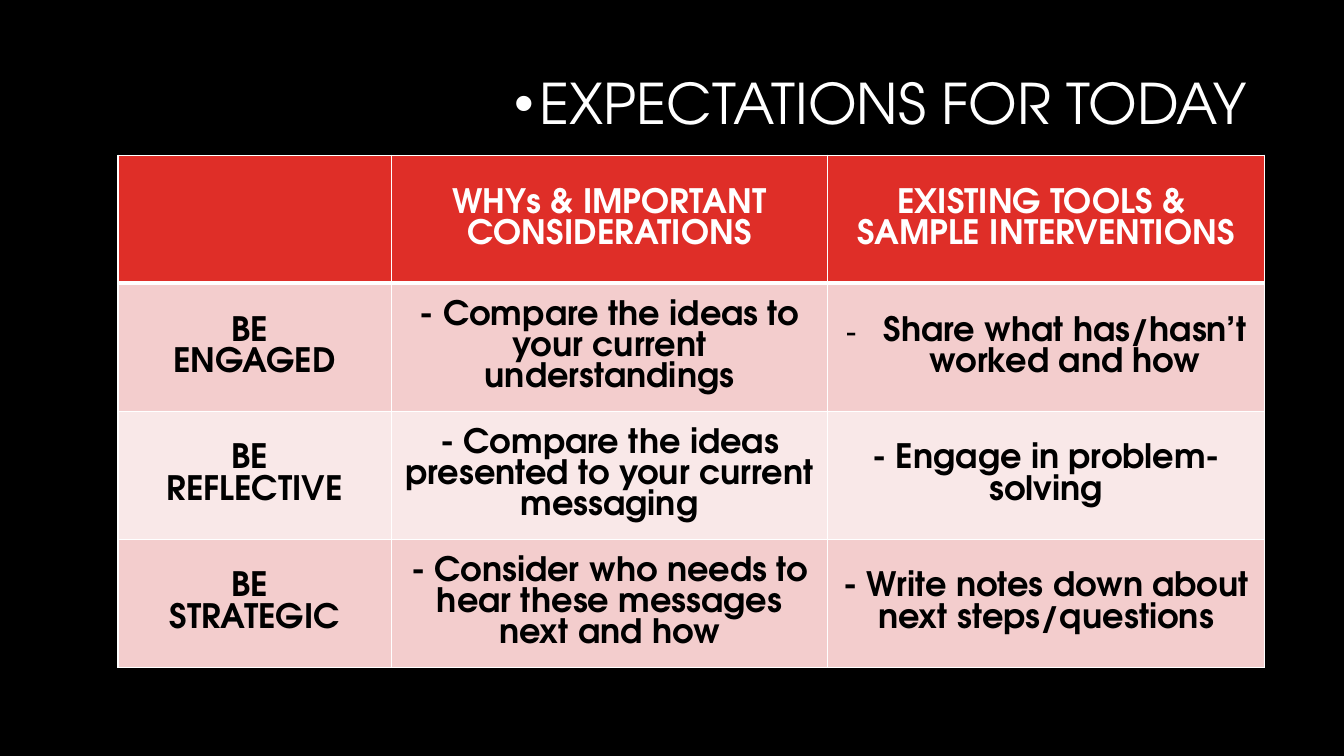
from pptx import Presentation
from pptx.dml.color import RGBColor
from pptx.enum.text import MSO_ANCHOR as Anchor, PP_ALIGN as Align
from pptx.oxml import parse_xml
from pptx.oxml.ns import nsdecls
from pptx.util import Inches, Pt

TITLE = "EXPECTATIONS FOR TODAY"
# A line break inside a cell starts a new paragraph
EXPECTATIONS = [
    ["", "WHYs & IMPORTANT CONSIDERATIONS", "EXISTING TOOLS & \nSAMPLE INTERVENTIONS"],
    ["BE \nENGAGED", "- Compare the ideas to your current understandings",
     "Share what has/hasn’t worked and how"],
    ["BE \nREFLECTIVE", "- Compare the ideas presented to your current messaging",
     "- Engage in problem-solving"],
    ["BE \nSTRATEGIC", "- Consider who needs to hear these messages next and how",
     "- Write notes down about next steps/questions"],
]
BULLETED_CELL = (1, 2)
COLUMN_WIDTHS = [2.71, 4.33, 4.33]
ROW_HEIGHT = 1.27
FONT = "TeX Gyre Adventor"
BLACK, WHITE, RED = "000000", "FFFFFF", "DF2E28"
BANDS = ["F9E8E8", "F3CDCD"]


def color(value):
    return RGBColor.from_string(value)


def style(paragraph, **formats):
    """Set font values on every run of the paragraph."""
    for run in paragraph.runs:
        for key, value in formats.items():
            if key == "color":
                run.font.color.rgb = color(value)
            else:
                setattr(run.font, key, value)


def add_bullet(paragraph, char, indent):
    properties = paragraph._p.get_or_add_pPr()
    properties.set("marL", str(Inches(indent)))
    properties.set("indent", str(-Inches(indent)))
    properties.append(parse_xml(f'<a:buFont {nsdecls("a")} typeface="Arial"/>'))
    properties.append(parse_xml(f'<a:buChar {nsdecls("a")} char="{char}"/>'))


def add_borders(cell, widths):
    properties = cell._tc.get_or_add_tcPr()
    for side, width in widths.items():
        properties.append(parse_xml(
            f'<a:ln{side} {nsdecls("a")} w="{Pt(width)}"><a:solidFill>'
            f'<a:srgbClr val="{WHITE}"/></a:solidFill></a:ln{side}>'))


def add_title(slide):
    title = slide.shapes.title
    title.left, title.top = Inches(5), Inches(0.71)
    title.width, title.height = Inches(11.83), Inches(0.83)
    frame = title.text_frame
    frame.text = TITLE
    frame.vertical_anchor = Anchor.TOP
    frame.word_wrap = True
    heading = frame.paragraphs[0]
    heading.alignment = Align.LEFT
    heading.line_spacing = 0.9
    heading.space_before = Pt(0)
    add_bullet(heading, "•", 0.25)
    style(heading, name=FONT, size=Pt(40), color=WHITE)


def add_expectations(slide):
    rows, columns = len(EXPECTATIONS), len(COLUMN_WIDTHS)
    table = slide.shapes.add_table(
        rows, columns, Inches(1.17), Inches(1.54),
        Inches(sum(COLUMN_WIDTHS)), Inches(rows * ROW_HEIGHT)).table
    for column, width in zip(table.columns, COLUMN_WIDTHS):
        column.width = Inches(width)
    for r, texts in enumerate(EXPECTATIONS):
        table.rows[r].height = Inches(ROW_HEIGHT)
        for c, text in enumerate(texts):
            cell = table.cell(r, c)
            add_borders(cell, {"L": 1, "R": 1, "T": 3 if r == 1 else 1,
                               "B": 3 if r == 0 else 1})
            cell.fill.solid()
            cell.fill.fore_color.rgb = color(BANDS[r % 2] if r else RED)
            cell.vertical_anchor = Anchor.MIDDLE
            cell.text = text
            for paragraph in cell.text_frame.paragraphs:
                paragraph.alignment = Align.CENTER
                if (r, c) == BULLETED_CELL:
                    add_bullet(paragraph, "-", 0.38)
                style(paragraph, name=FONT, size=Pt(24), bold=True,
                      color=BLACK if r else WHITE)


def main():
    deck = Presentation()
    deck.slide_width, deck.slide_height = Inches(13.33), Inches(7.5)
    slide = deck.slides.add_slide(deck.slide_layouts[5])
    slide.background.fill.solid()
    slide.background.fill.fore_color.rgb = color(BLACK)
    add_title(slide)
    add_expectations(slide)
    deck.save("out.pptx")


if __name__ == "__main__":
    main()
